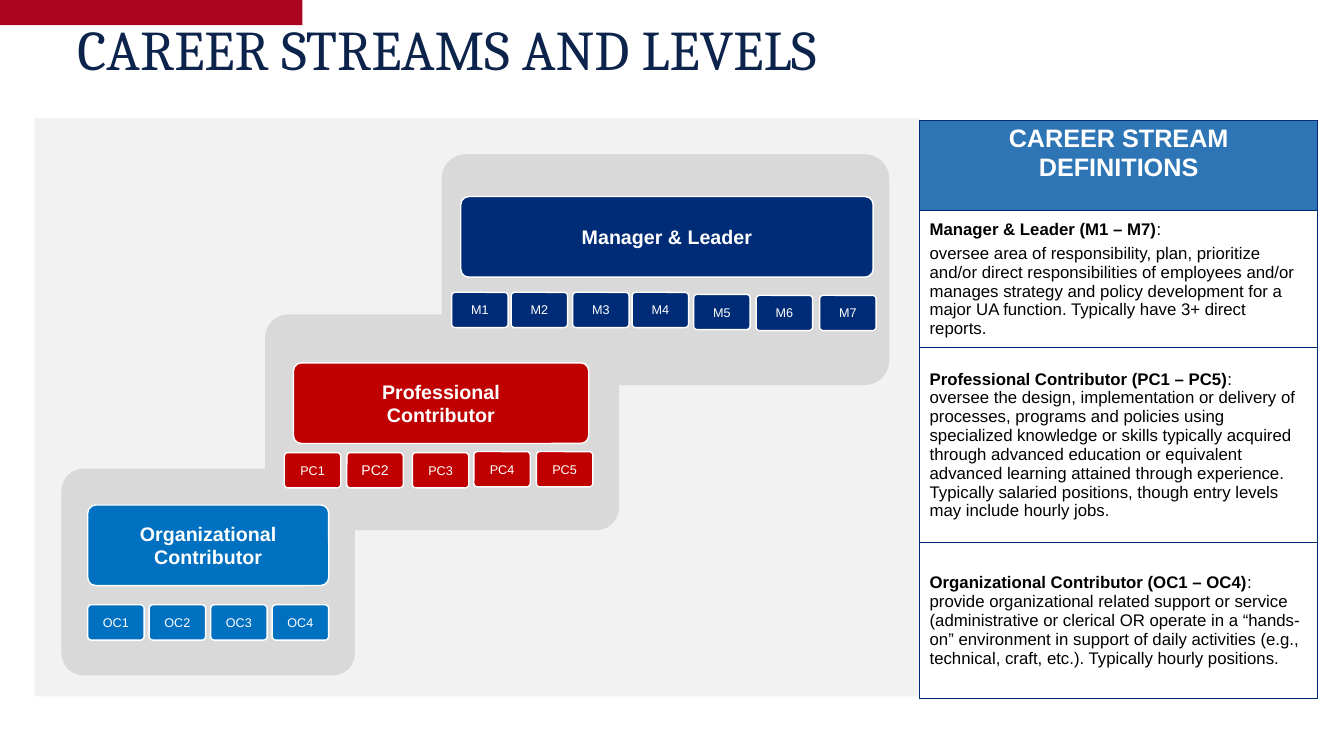
from dataclasses import dataclass

from lxml import etree
from pptx import Presentation
from pptx.dml.color import RGBColor
from pptx.enum.shapes import MSO_SHAPE
from pptx.enum.text import MSO_ANCHOR, PP_ALIGN
from pptx.oxml.ns import qn
from pptx.util import Emu, Pt

RECT, ROUND = MSO_SHAPE.RECTANGLE, MSO_SHAPE.ROUNDED_RECTANGLE
TOP, MIDDLE = MSO_ANCHOR.TOP, MSO_ANCHOR.MIDDLE
LEFT, CENTER = PP_ALIGN.LEFT, PP_ALIGN.CENTER


@dataclass(frozen=True)
class Theme:
    navy: str = "0C234B"
    accent: str = "AB0520"
    field: str = "F2F2F2"
    panel: str = "D9D9D9"
    lead: str = "002C77"
    pro: str = "C00000"
    org: str = "0070C0"
    head: str = "2E75B6"
    border: str = "002B74"
    white: str = "FFFFFF"
    black: str = "000000"
    serif: str = "Cambria"
    sans: str = "Arial"
    title: int = 40
    banner: int = 18
    label: int = 14
    body: int = 12
    chip: int = 9


@dataclass(frozen=True)
class Box:
    x: int
    y: int
    w: int
    h: int


@dataclass(frozen=True)
class Chip:
    text: str
    x: int
    y: int
    size: int = 9


@dataclass(frozen=True)
class Stream:
    lines: tuple[str, ...]
    color: str
    panel: Box
    head: Box
    chips: tuple[Chip, ...]


@dataclass(frozen=True)
class Entry:
    name: str
    text: str
    height: int
    gap: int = 0


T = Theme()
CHIP_W, CHIP_H, INSET = 56, 35, 8

STREAMS = (
    Stream(("Organizational Contributor",), T.org,
           Box(61, 465, 291, 205), Box(87, 501, 239, 80),
           tuple(Chip(f"OC{i + 1}", 87 + 61 * i, 600) for i in range(4))),
    Stream(("Professional", "Contributor"), T.pro,
           Box(263, 312, 351, 214), Box(291, 360, 293, 80),
           (Chip("PC1", 282, 449), Chip("PC2", 344, 449, 10),
            Chip("PC3", 409, 449), Chip("PC4", 470, 448),
            Chip("PC5", 532, 448))),
    Stream(("Manager & Leader",), T.lead,
           Box(438, 153, 444, 229), Box(457, 195, 409, 80),
           (Chip("M1", 448, 290), Chip("M2", 507, 290), Chip("M3", 568, 290),
            Chip("M4", 627, 290), Chip("M5", 688, 292), Chip("M6", 750, 293),
            Chip("M7", 813, 293))),
)

ENTRIES = (
    Entry("Manager & Leader (M1 – M7)",
          "oversee area of responsibility, plan, prioritize and/or direct "
          "responsibilities of employees and/or manages strategy and policy "
          "development for a major UA function. Typically have 3+ direct reports.",
          130, 4),
    Entry("Professional Contributor (PC1 – PC5)",
          "oversee the design, implementation or delivery of processes, programs "
          "and policies using specialized knowledge or skills typically acquired "
          "through advanced education or equivalent advanced learning attained "
          "through experience. Typically salaried positions, though entry levels "
          "may include hourly jobs.", 194),
    Entry("Organizational Contributor (OC1 – OC4)",
          "provide organizational related support or service (administrative or "
          "clerical OR operate in a “hands-on” environment in support of daily "
          "activities (e.g., technical, craft, etc.). Typically hourly positions.",
          154),
)


def px(n: int) -> Emu:
    return Emu(n * 9144)


def rgb(code: str) -> RGBColor:
    return RGBColor.from_string(code)


def place(box: Box) -> tuple[Emu, ...]:
    return px(box.x), px(box.y), px(box.w), px(box.h)


def add_run(para, text: str, size: int, color: str, bold: bool = False,
            face: str = T.sans) -> None:
    run = para.add_run()
    run.text = text
    font = run.font
    font.name, font.size, font.bold = face, Pt(size), bold
    font.color.rgb = rgb(color)


def add_para(frame, first: bool, align=LEFT):
    para = frame.paragraphs[0] if first else frame.add_paragraph()
    para.alignment = align
    return para


def add_box(slide, box: Box, fill: str, kind=RECT, adj: float = 0):
    shape = slide.shapes.add_shape(kind, *place(box))
    shape.shadow.inherit = False
    shape.fill.solid()
    shape.fill.fore_color.rgb = rgb(fill)
    shape.line.fill.background()
    if kind == ROUND:
        shape.adjustments[0] = adj
    return shape


def add_card(slide, box: Box, fill: str, lines: tuple[str, ...], size: int,
             bold: bool = False) -> None:
    shape = add_box(slide, box, fill, ROUND, 0.1)
    shape.line.color.rgb = rgb(T.white)
    shape.line.width = Pt(1)
    frame = shape.text_frame
    frame.word_wrap = True
    frame.vertical_anchor = MIDDLE
    frame.margin_left = frame.margin_right = px(INSET)
    frame.margin_top = frame.margin_bottom = px(INSET)
    for i, line in enumerate(lines):
        add_run(add_para(frame, i == 0, CENTER), line, size, T.white, bold)


def set_cell(cell, fill: str, anchor) -> None:
    props = cell._tc.get_or_add_tcPr()
    for side in ("lnL", "lnR", "lnT", "lnB"):
        edge = etree.SubElement(props, qn(f"a:{side}"), w=str(Pt(0.75)))
        solid = etree.SubElement(edge, qn("a:solidFill"))
        etree.SubElement(solid, qn("a:srgbClr"), val=T.border)
    cell.fill.solid()
    cell.fill.fore_color.rgb = rgb(fill)
    cell.vertical_anchor = anchor


def add_defs(slide, box: Box, top: int) -> None:
    table = slide.shapes.add_table(len(ENTRIES) + 1, 1, *place(box)).table
    table.first_row = table.horz_banding = False
    table.rows[0].height = px(top)
    cell = table.cell(0, 0)
    set_cell(cell, T.head, TOP)
    add_run(add_para(cell.text_frame, True, CENTER),
            "CAREER STREAM DEFINITIONS", T.banner, T.white, True)
    for row, entry in enumerate(ENTRIES, 1):
        table.rows[row].height = px(entry.height)
        cell = table.cell(row, 0)
        set_cell(cell, T.white, MIDDLE)
        name = add_para(cell.text_frame, True)
        name.space_after = Pt(entry.gap)
        add_run(name, entry.name, T.body, T.black, True)
        add_run(name, ":", T.body, T.black)
        add_run(add_para(cell.text_frame, False), entry.text, T.body, T.black)


def main() -> None:
    deck = Presentation()
    deck.slide_width, deck.slide_height = px(1333), px(750)
    slide = deck.slides.add_slide(deck.slide_layouts[6])

    # Title and accent bar
    frame = slide.shapes.add_textbox(*place(Box(67, 13, 1206, 77))).text_frame
    frame.word_wrap = True
    frame.vertical_anchor = MIDDLE
    title = add_para(frame, True)
    title.line_spacing = 0.9
    add_run(title, "CAREER STREAMS AND LEVELS", T.title, T.navy, face=T.serif)
    add_box(slide, Box(0, 0, 300, 25), T.accent)

    # Background field and definitions
    add_box(slide, Box(34, 117, 878, 574), T.field)
    add_defs(slide, Box(912, 119, 395, 568), 90)

    # Staircase of streams, panels behind all cards
    for stream in STREAMS:
        add_box(slide, stream.panel, T.panel, ROUND, 0.106)
    for stream in STREAMS:
        add_card(slide, stream.head, stream.color, stream.lines, T.label, True)
        for chip in stream.chips:
            add_card(slide, Box(chip.x, chip.y, CHIP_W, CHIP_H), stream.color,
                     (chip.text,), chip.size)

    deck.save("out.pptx")


if __name__ == "__main__":
    main()
